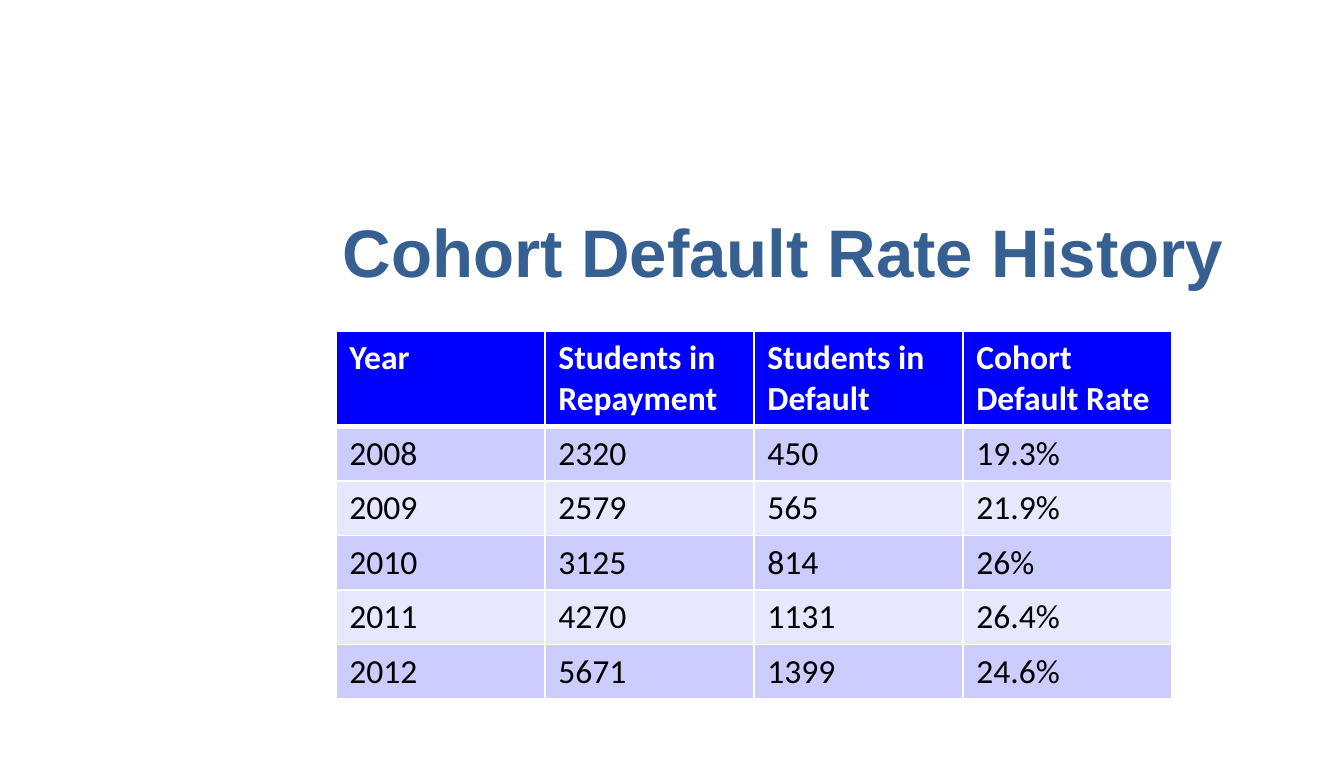
import dataclasses

import pptx
import pptx.dml.color
import pptx.enum.text
import pptx.oxml
import pptx.oxml.ns
import pptx.util

Inches = pptx.util.Inches
Pt = pptx.util.Pt

WHITE = "FFFFFF"
BLACK = "000000"
HEADER_FILL = "0000FF"
BAND_FILLS = ("CCCCFF", "E7E7FF")
TITLE_COLOUR = "376092"

COLUMN_WIDTH = 1.555
HEADER_HEIGHT = 0.7
ROW_HEIGHT = 0.4


@dataclasses.dataclass(frozen=True)
class CohortYear:
    year: str
    repayment: str
    default: str
    rate: str


@dataclasses.dataclass(frozen=True)
class CellStyle:
    fill: str
    colour: str
    bold: bool = False
    top: float = 1
    bottom: float = 1


HEADERS = ("Year", "Students in\nRepayment", "Students in Default", "Cohort Default Rate")
COHORTS = (
    CohortYear("2008", "2320", "450", "19.3%"),
    CohortYear("2009", "2579", "565", "21.9%"),
    CohortYear("2010", "3125", "814", "26%"),
    CohortYear("2011", "4270", "1131", "26.4%"),
    CohortYear("2012", "5671", "1399", "24.6%"),
)


def rgb(colour: str) -> pptx.dml.color.RGBColor:
    return pptx.dml.color.RGBColor.from_string(colour)


def add_text(para, text: str, font: str, size: float, colour: str, bold: bool) -> None:
    for index, line in enumerate(text.split("\n")):
        if index:
            para.add_line_break()
        span = para.add_run()
        span.text = line
        span.font.name = font
        span.font.size = Pt(size)
        span.font.bold = bold
        span.font.color.rgb = rgb(colour)


def set_borders(cell, style: CellStyle) -> None:
    properties = cell._tc.get_or_add_tcPr()
    widths = {"lnL": 1, "lnR": 1, "lnT": style.top, "lnB": style.bottom}
    for index, (tag, width) in enumerate(widths.items()):
        line = pptx.oxml.parse_xml(
            f'<a:{tag} {pptx.oxml.ns.nsdecls("a")} w="{Pt(width)}">'
            f'<a:solidFill><a:srgbClr val="{WHITE}"/></a:solidFill></a:{tag}>'
        )
        properties.insert(index, line)


def fill_row(table, row: int, texts: tuple, style: CellStyle) -> None:
    for column, text in enumerate(texts):
        cell = table.cell(row, column)
        cell.fill.solid()
        cell.fill.fore_color.rgb = rgb(style.fill)
        set_borders(cell, style)
        add_text(cell.text_frame.paragraphs[0], text, "Calibri", 18, style.colour, style.bold)


def add_title(page) -> None:
    box = page.shapes.title
    box.left, box.top = Inches(2.45), Inches(1.26)
    box.width, box.height = Inches(7.21), Inches(1.21)
    box.text_frame.vertical_anchor = pptx.enum.text.MSO_ANCHOR.MIDDLE
    para = box.text_frame.paragraphs[0]
    para.alignment = pptx.enum.text.PP_ALIGN.LEFT
    add_text(para, "Cohort Default Rate History", "Arial", 36, TITLE_COLOUR, True)


def add_cohort_table(page) -> None:
    table = page.shapes.add_table(
        len(COHORTS) + 1, len(HEADERS), Inches(2.5), Inches(2.46),
        Inches(COLUMN_WIDTH * len(HEADERS)),
        Inches(HEADER_HEIGHT + ROW_HEIGHT * len(COHORTS)),
    ).table
    for column in table.columns:
        column.width = Inches(COLUMN_WIDTH)
    for index, row in enumerate(table.rows):
        row.height = Inches(ROW_HEIGHT if index else HEADER_HEIGHT)

    fill_row(table, 0, HEADERS, CellStyle(HEADER_FILL, WHITE, bold=True, bottom=3))
    for row, cohort in enumerate(COHORTS, start=1):
        style = CellStyle(BAND_FILLS[(row - 1) % 2], BLACK, top=3 if row == 1 else 1)
        fill_row(table, row, dataclasses.astuple(cohort), style)


def main() -> None:
    deck = pptx.Presentation()
    deck.slide_width, deck.slide_height = Inches(10), Inches(5.63)
    page = deck.slides.add_slide(deck.slide_layouts.get_by_name("Title Only"))
    add_title(page)
    add_cohort_table(page)
    deck.save("out.pptx")


if __name__ == "__main__":
    main()
